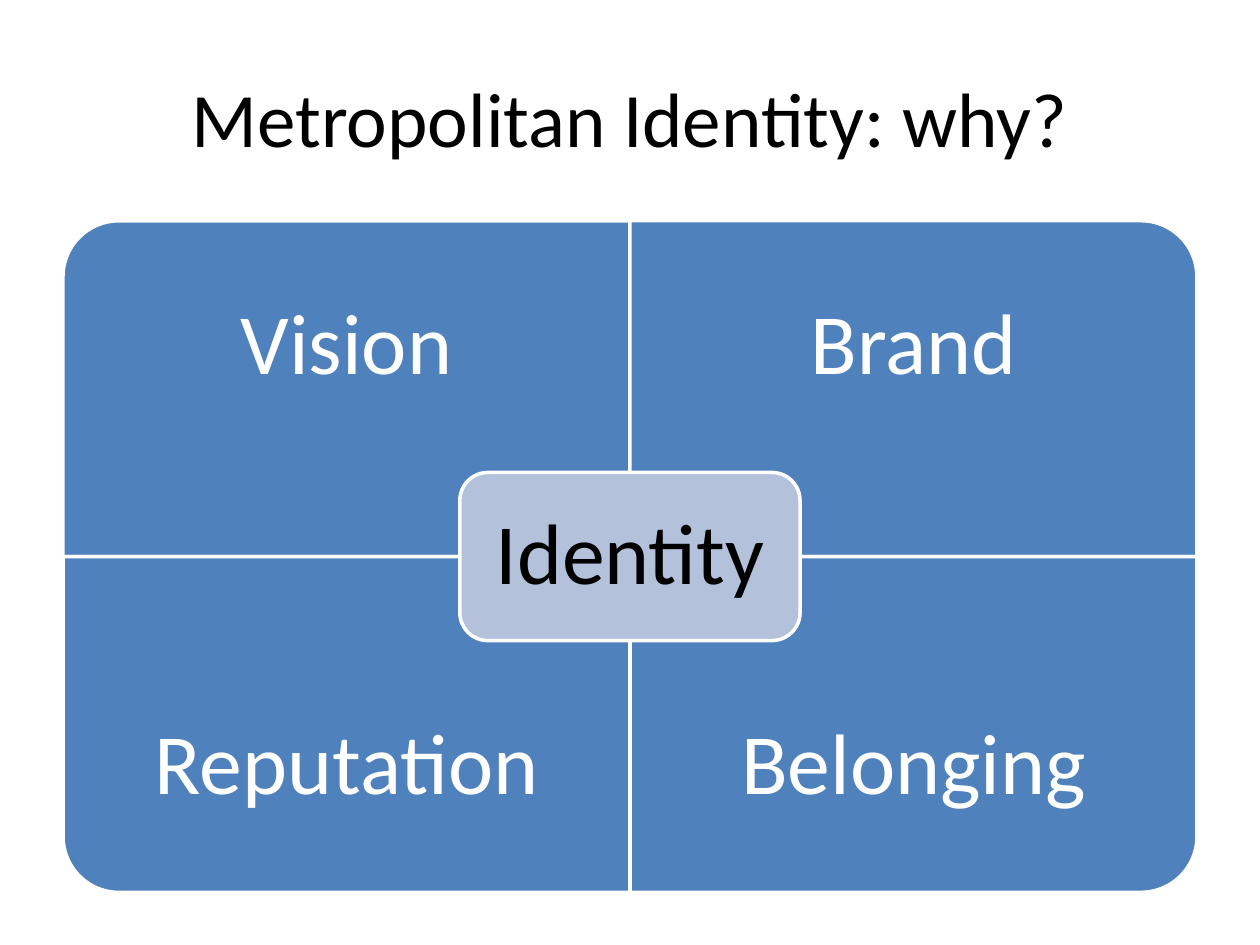
from pptx import Presentation
from pptx.dml.color import RGBColor
from pptx.enum import shapes, text
from pptx.util import Cm, Pt

TITLE = "Metropolitan Identity: why?"
CENTRE = "Identity"
# (label, column, row, rotation that turns the rounded corner outwards)
QUADRANTS = [
    ("Vision", 0, 0, 270),
    ("Brand", 1, 0, 0),
    ("Reputation", 0, 1, 180),
    ("Belonging", 1, 1, 90),
]

THEME = {
    "font": "Calibri",
    "title_size": Pt(44),
    "label_size": Pt(49),
    "line_width": Pt(2),
    "quadrant": RGBColor(0x4F, 0x81, 0xBD),
    "centre": RGBColor(0xB3, 0xC1, 0xDB),
    "light": RGBColor(0xFF, 0xFF, 0xFF),
    "dark": RGBColor(0x00, 0x00, 0x00),
}

LEFT, TOP = Cm(1.27), Cm(4.45)
CELL_W, CELL_H = Cm(11.43), Cm(6.77)
LABEL_H = Cm(5.08)
CENTRE_W, CENTRE_H = Cm(6.86), Cm(3.39)
CENTRE_PAD = Cm(0.17)


def write(frame, words, size, color):
    frame.word_wrap = True
    frame.vertical_anchor = text.MSO_ANCHOR.MIDDLE
    paragraph = frame.paragraphs[0]
    paragraph.alignment = text.PP_ALIGN.CENTER
    run = paragraph.add_run()
    run.text = words
    run.font.name = THEME["font"]
    run.font.size = size
    run.font.color.rgb = color
    return paragraph


def add_panel(group, kind, mid_x, mid_y, width, height, fill, rotation=0):
    """Draw an outlined panel about its midpoint; width and height are as seen."""
    if rotation % 180:
        width, height = height, width
    panel = group.shapes.add_shape(
        kind, mid_x - width // 2, mid_y - height // 2, width, height)
    panel.rotation = rotation
    panel.shadow.inherit = False
    panel.fill.solid()
    panel.fill.fore_color.rgb = fill
    panel.line.color.rgb = THEME["light"]
    panel.line.width = THEME["line_width"]


def add_label(group, words, box, inset, color):
    frame = group.shapes.add_textbox(*box).text_frame
    frame.margin_left = frame.margin_right = inset
    frame.margin_top = frame.margin_bottom = inset
    paragraph = write(frame, words, THEME["label_size"], color)
    paragraph.line_spacing = 0.9


def add_matrix(slide):
    group = slide.shapes.add_group_shape()
    for label, column, row, rotation in QUADRANTS:
        x, y = LEFT + column * CELL_W, TOP + row * CELL_H
        add_panel(group, shapes.MSO_SHAPE.ROUND_1_RECTANGLE,
                  x + CELL_W // 2, y + CELL_H // 2, CELL_W, CELL_H,
                  THEME["quadrant"], rotation)
        # Labels keep to the outer edge, clear of the centre panel
        label_y = y + row * (CELL_H - LABEL_H)
        add_label(group, label, (x, label_y, CELL_W, LABEL_H), Cm(0.97),
                  THEME["light"])

    mid_x, mid_y = LEFT + CELL_W, TOP + CELL_H
    add_panel(group, shapes.MSO_SHAPE.ROUNDED_RECTANGLE, mid_x, mid_y,
              CENTRE_W, CENTRE_H, THEME["centre"])
    width, height = CENTRE_W - 2 * CENTRE_PAD, CENTRE_H - 2 * CENTRE_PAD
    add_label(group, CENTRE,
              (mid_x - width // 2, mid_y - height // 2, width, height),
              Cm(0.5), THEME["dark"])


def main():
    deck = Presentation()
    deck.slide_width, deck.slide_height = Cm(25.4), Cm(19.05)
    slide = deck.slides.add_slide(deck.slide_layouts[5])
    title = slide.shapes.title
    title.left, title.top = LEFT, Cm(0.76)
    title.width, title.height = 2 * CELL_W, Cm(3.18)
    write(title.text_frame, TITLE, THEME["title_size"], THEME["dark"])
    add_matrix(slide)
    deck.save("out.pptx")


if __name__ == "__main__":
    main()
